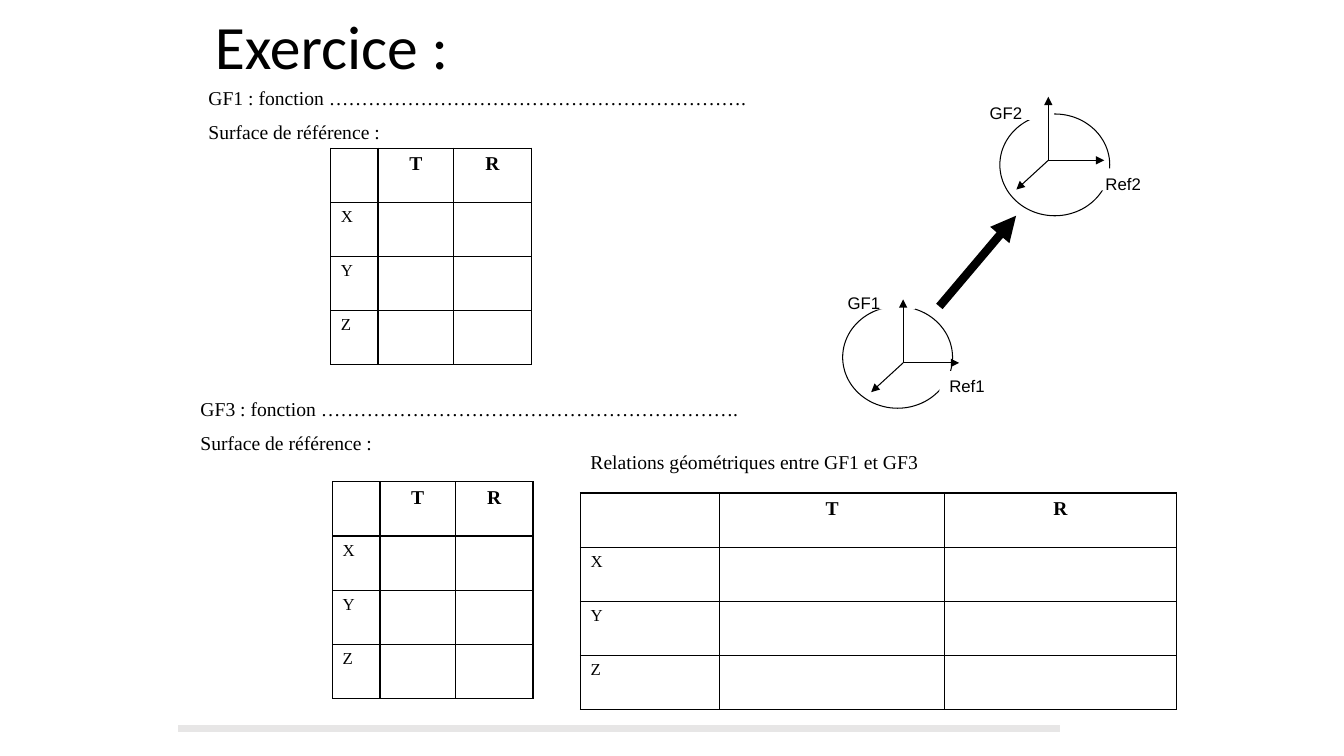
from dataclasses import dataclass

from lxml import etree
from pptx import Presentation
from pptx.dml.color import RGBColor
from pptx.enum.shapes import MSO_CONNECTOR, MSO_SHAPE
from pptx.enum.text import MSO_ANCHOR, PP_ALIGN
from pptx.oxml import parse_xml
from pptx.oxml.ns import nsdecls, qn
from pptx.util import Pt


@dataclass(frozen=True)
class Theme:
    ink: str = "000000"
    paper: str = "FFFFFF"
    bar: str = "E7E6E6"
    title_font: str = "Calibri"
    body_font: str = "Times New Roman"
    label_font: str = "Arial"
    title_size: float = 44
    body_size: float = 14
    small_size: float = 12
    thin: float = 0.75
    border: float = 1
    thick: float = 6


class SlideBuilder:
    def __init__(self, slide, theme):
        self.slide = slide
        self.theme = theme

    def run(self, p, text, font, size, bold=False):
        r = p.add_run()
        r.text = text
        r.font.name = font
        r.font.size = Pt(size)
        r.font.bold = bold
        r.font.color.rgb = RGBColor.from_string(self.theme.ink)

    def title(self, text, x, y, w, h):
        sp = self.slide.shapes.title
        sp.left, sp.top, sp.width, sp.height = Pt(x), Pt(y), Pt(w), Pt(h)
        tf = sp.text_frame
        tf.word_wrap = True
        tf.vertical_anchor = MSO_ANCHOR.MIDDLE
        p = tf.paragraphs[0]
        p.alignment = PP_ALIGN.LEFT
        p.line_spacing = 0.9
        self.run(p, text, self.theme.title_font, self.theme.title_size)

    def shape(self, kind, x, y, w, h, fill, line=None, width=0):
        sp = self.slide.shapes.add_shape(kind, Pt(x), Pt(y), Pt(w), Pt(h))
        sp.shadow.inherit = False
        sp.fill.solid()
        sp.fill.fore_color.rgb = RGBColor.from_string(fill)
        if line:
            sp.line.color.rgb = RGBColor.from_string(line)
            sp.line.width = Pt(width)
        else:
            sp.line.fill.background()
        return sp

    def label(self, text, x, y, w):
        sp = self.shape(MSO_SHAPE.RECTANGLE, x, y, w, 15.8, self.theme.paper)
        tf = sp.text_frame
        tf.vertical_anchor = MSO_ANCHOR.TOP
        p = tf.paragraphs[0]
        p.alignment = PP_ALIGN.LEFT
        self.run(p, text, self.theme.label_font, self.theme.small_size)

    def arrow(self, x1, y1, x2, y2, width):
        cx = self.slide.shapes.add_connector(
            MSO_CONNECTOR.STRAIGHT, Pt(x1), Pt(y1), Pt(x2), Pt(y2))
        cx.line.color.rgb = RGBColor.from_string(self.theme.ink)
        cx.line.width = Pt(width)
        ln = cx.line._get_or_add_ln()
        etree.SubElement(ln, qn("a:tailEnd"), type="triangle")
        etree.SubElement(cx._element.spPr, qn("a:effectLst"))

    def axes(self, x, y):
        for dx, dy in ((0, -45.4), (40, 0), (-22.8, 20.9)):
            self.arrow(x, y, x + dx, y + dy, self.theme.thin)

    def sphere(self, x, y):
        self.shape(MSO_SHAPE.OVAL, x, y, 78.5, 72.7, self.theme.paper,
                   self.theme.ink, self.theme.thin)

    def text(self, lines, x, y, h):
        box = self.slide.shapes.add_textbox(Pt(x), Pt(y), Pt(416), Pt(h))
        tf = box.text_frame
        tf.word_wrap = True
        for i, line in enumerate(lines):
            p = tf.add_paragraph() if i else tf.paragraphs[0]
            if i:
                p.space_before = Pt(7.5)
            self.run(p, line, self.theme.body_font, self.theme.body_size)

    def border(self, cell):
        tcPr = cell._tc.get_or_add_tcPr()
        for i, side in enumerate(("lnL", "lnR", "lnT", "lnB")):
            tcPr.insert(i, parse_xml(
                f'<a:{side} {nsdecls("a")} w="{Pt(self.theme.border)}"><a:solidFill>'
                f'<a:srgbClr val="{self.theme.ink}"/></a:solidFill></a:{side}>'))

    def table(self, x, y, widths):
        rows = (("", "T", "R"), ("X", "", ""), ("Y", "", ""), ("Z", "", ""))
        height = 38.7
        table = self.slide.shapes.add_table(
            len(rows), len(widths), Pt(x), Pt(y),
            Pt(sum(widths)), Pt(height * len(rows))).table
        table.first_row = table.horz_banding = False
        for col, width in zip(table.columns, widths):
            col.width = Pt(width)
        for i, values in enumerate(rows):
            table.rows[i].height = Pt(height)
            for j, value in enumerate(values):
                cell = table.cell(i, j)
                cell.fill.background()
                self.border(cell)
                if value:
                    head = i == 0
                    p = cell.text_frame.paragraphs[0]
                    p.alignment = PP_ALIGN.CENTER if head else PP_ALIGN.LEFT
                    size = self.theme.body_size if head else self.theme.small_size
                    self.run(p, value, self.theme.body_font, size, head)


def main():
    prs = Presentation()
    prs.slide_width, prs.slide_height = Pt(960), Pt(540)
    theme = Theme()
    s = SlideBuilder(prs.slides.add_slide(prs.slide_layouts[5]), theme)

    s.shape(MSO_SHAPE.RECTANGLE, 126.7, 517, 630.7, 6.5, theme.bar, theme.paper, 1)
    s.title("Exercice :", 146.2, 2.2, 624.2, 66.2)

    s.sphere(601.9, 218.9)
    s.label("GF1", 598.3, 205.2, 55.4)
    s.axes(645.1, 259.2)
    s.arrow(671, 218.9, 725.8, 154.1, theme.thick)
    s.label("Ref1", 671, 265, 60.5)

    s.sphere(714.2, 81.4)
    s.label("GF2", 699.8, 69.8, 53.3)
    s.axes(748.8, 114.5)
    s.label("Ref2", 782.6, 120.2, 43.2)

    dots = "…" * 18 + "."
    narrow = (33.8, 54, 55.4)
    for name, dot_count, text_x, text_y, table_x, table_y in (
            ("GF1", dots, 141.8, 57.6, 236.2, 105.8),
            ("GF3", dots, 136.1, 280.1, 237.6, 344.2)):
        leader = "………………………………………………………."
        s.text((f"{name} : fonction {leader}", "Surface de référence :"),
               text_x, text_y, 49.7)
        s.table(table_x, table_y, narrow)

    s.text(("Relations géométriques entre GF1 et GF3",), 414.7, 317.5, 24.5)
    s.table(414.7, 352.1, (99.4, 160.6, 165.6))

    prs.save("out.pptx")


if __name__ == "__main__":
    main()
